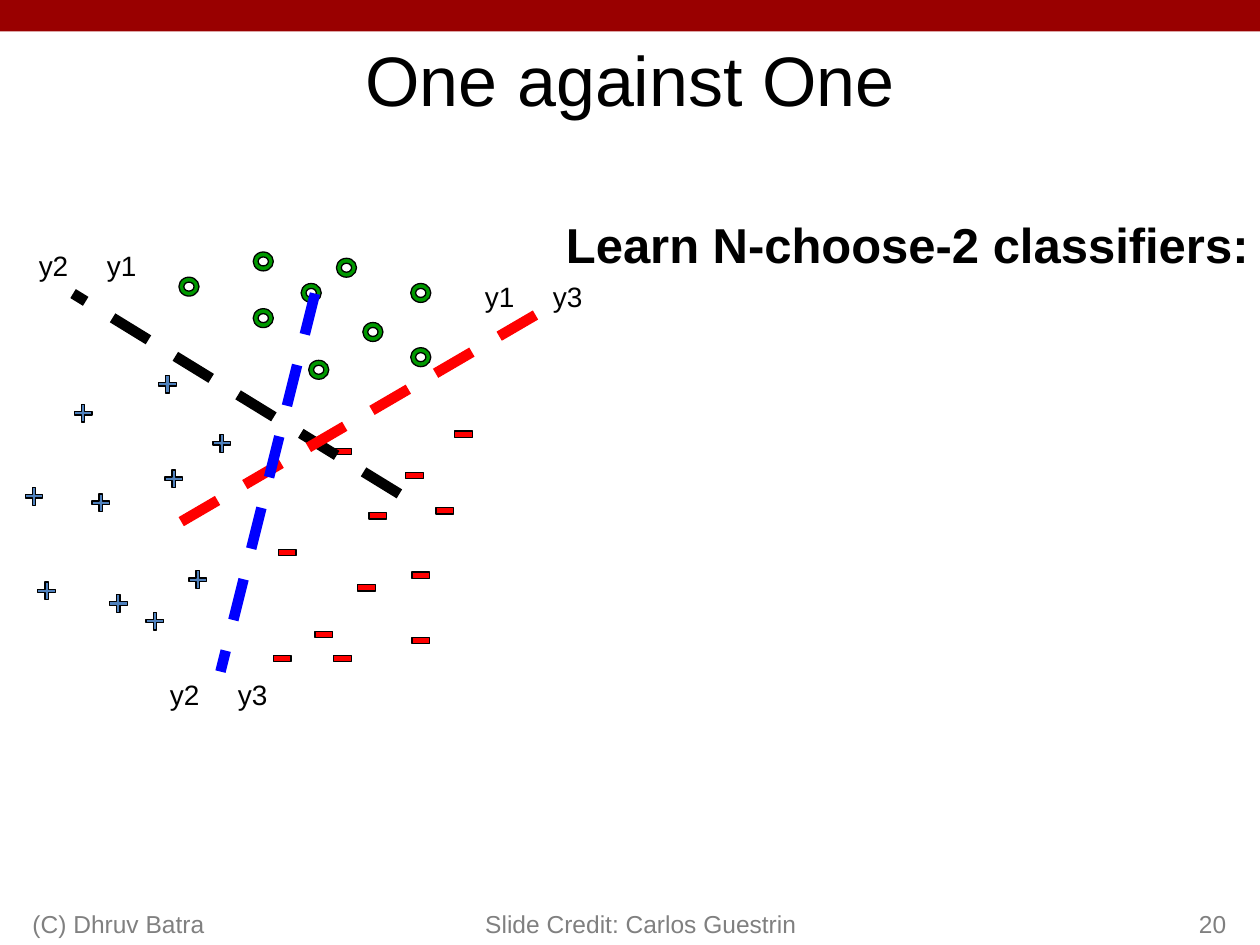
from lxml.etree import SubElement as Sub
from pptx import Presentation
from pptx.dml.color import RGBColor as Color
from pptx.enum.dml import MSO_LINE_DASH_STYLE as Dash
from pptx.enum.shapes import MSO_CONNECTOR as Link, MSO_SHAPE as Shape
from pptx.enum.text import MSO_ANCHOR as Anchor, PP_ALIGN as Align
from pptx.oxml.ns import qn
from pptx.util import Inches, Pt

THEME = {
    "font": "Arial",
    "ink": "000000", "bar": "990000", "note": "808080",
    "plus": "4F81BD", "minus": "FF0000", "ring": "009900",
    "red": "FF0000", "blue": "0000FF",
    "title": 40, "head": 28, "label": 16, "foot": 14,
    "edge": 0.75, "split": 6,
}

# Each class: name, preset, adjustment, width, height, top-left corners
MARKS = [
    ("plus", Shape.CROSS, 0.406, 0.14, 0.14, [
        (1.26, 2.98), (1.31, 3.73), (0.73, 3.92), (0.87, 4.72), (0.3, 4.62),
        (1.69, 3.45), (1.16, 4.86), (1.5, 4.53), (0.59, 3.21), (0.2, 3.87)]),
    ("minus", Shape.RECTANGLE, None, 0.14, 0.05, [
        (2.65, 3.56), (2.21, 4.36), (3.61, 3.42), (2.93, 4.07),
        (3.27, 4.54), (2.84, 4.64), (2.5, 5.01), (2.65, 5.2),
        (2.17, 5.2), (3.27, 5.06), (3.46, 4.03), (3.22, 3.75)]),
    ("ring", Shape.DONUT, 0.26, 0.16, 0.15, [
        (2.01, 2.45), (2.67, 2.05), (2.88, 2.56), (2.39, 2.25), (2.45, 2.86),
        (1.42, 2.2), (3.26, 2.76), (3.26, 2.25), (2.01, 2)]),
]

# Each classifier: colour, start, end
SPLITS = [
    ("ink", (3.17, 3.92), (0.58, 2.33)),
    ("red", (4.25, 2.5), (1.25, 4.25)),
    ("blue", (2.5, 2.33), (1.75, 5.33)),
]

# Each pair of classes: left, top, first, second
PAIRS = [
    (0.21, 1.92, "y2", "y1"),
    (1.25, 5.33, "y2", "y3"),
    (3.75, 2.17, "y1", "y3"),
]

# Each footer: words, left, width, alignment
FEET = [
    ("Slide Credit: Carlos Guestrin", 3.5, 2.92, Align.RIGHT),
    ("20", 7.75, 2.08, Align.RIGHT),
    ("(C) Dhruv Batra", 0.16, 3.17, Align.LEFT),
]


def tint(name):
    return Color.from_string(THEME[name])


def add_text(slide, words, box, size, color="ink", bold=False,
             align=Align.CENTER, anchor=Anchor.TOP, wrap=True, tab=None):
    """Add a text box; tab is the distance of its one tab stop, in inches."""
    frame = slide.shapes.add_textbox(*map(Inches, box)).text_frame
    frame.word_wrap = wrap
    frame.vertical_anchor = anchor
    para = frame.paragraphs[0]
    para.alignment = align
    if tab:
        stops = Sub(para._p.get_or_add_pPr(), qn("a:tabLst"))
        Sub(stops, qn("a:tab"), pos=str(Inches(tab)), algn="l")
    para.text = words
    for run in para.runs:
        font = run.font
        font.name, font.size, font.bold = THEME["font"], Pt(THEME[size]), bold
        font.color.rgb = tint(color)


def add_mark(slide, kind, box, fill, edge=True, adjust=None):
    shape = slide.shapes.add_shape(kind, *map(Inches, box))
    shape.shadow.inherit = False
    shape.fill.solid()
    shape.fill.fore_color.rgb = tint(fill)
    if edge:
        shape.line.color.rgb = tint("ink")
        shape.line.width = Pt(THEME["edge"])
    else:
        shape.line.fill.background()
    if adjust is not None:
        shape.adjustments[0] = adjust


def add_split(slide, color, start, end):
    link = slide.shapes.add_connector(
        Link.STRAIGHT, *map(Inches, start + end))
    link.line.color.rgb = tint(color)
    link.line.width = Pt(THEME["split"])
    link.line.dash_style = Dash.DASH
    Sub(link._element.spPr, qn("a:effectLst"))


def main():
    deck = Presentation()
    deck.slide_width, deck.slide_height = Inches(10), Inches(7.5)
    slide = deck.slides.add_slide(deck.slide_layouts[6])

    add_mark(slide, Shape.RECTANGLE, (0, 0, 10, 0.25), "bar", edge=False)
    add_text(slide, "One against One", (0.75, 0.25, 8.5, 0.75), "title",
             anchor=Anchor.MIDDLE)
    for name, kind, adjust, wide, high, spots in MARKS:
        for left, top in spots:
            add_mark(slide, kind, (left, top, wide, high), name,
                     adjust=adjust)
    add_text(slide, "Learn N-choose-2 classifiers:", (4.36, 1.65, 5.68, 0.57),
             "head", bold=True, wrap=False)
    for split in SPLITS:
        add_split(slide, *split)
    for words, left, wide, align in FEET:
        add_text(slide, words, (left, 7, wide, 0.5), "foot", color="note",
                 align=align, anchor=Anchor.BOTTOM)
    for left, top, first, second in PAIRS:
        add_text(slide, f"{first}\t{second}", (left, top, 1, 0.37), "label",
                 align=Align.LEFT, tab=0.54)

    deck.save("out.pptx")


if __name__ == "__main__":
    main()
